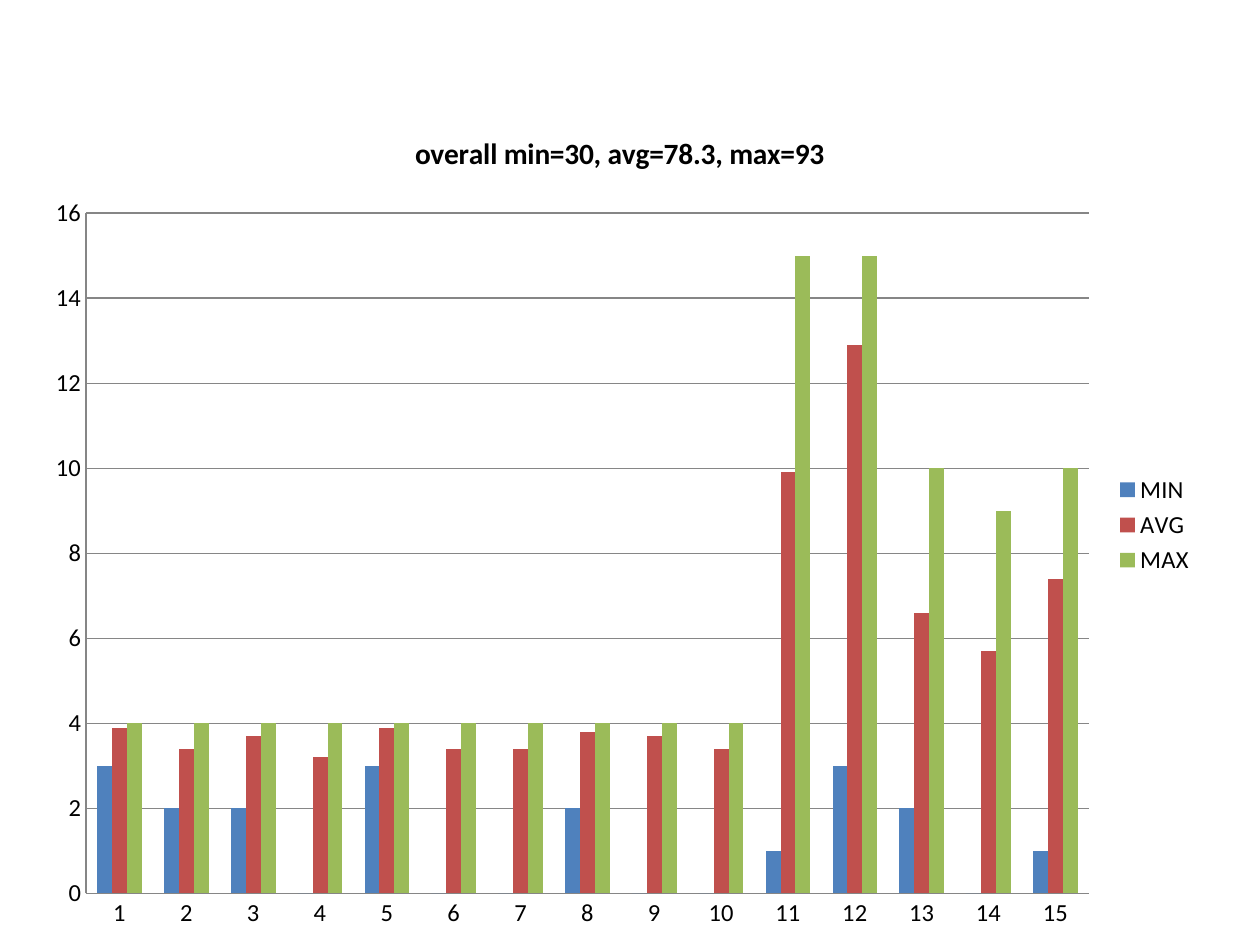
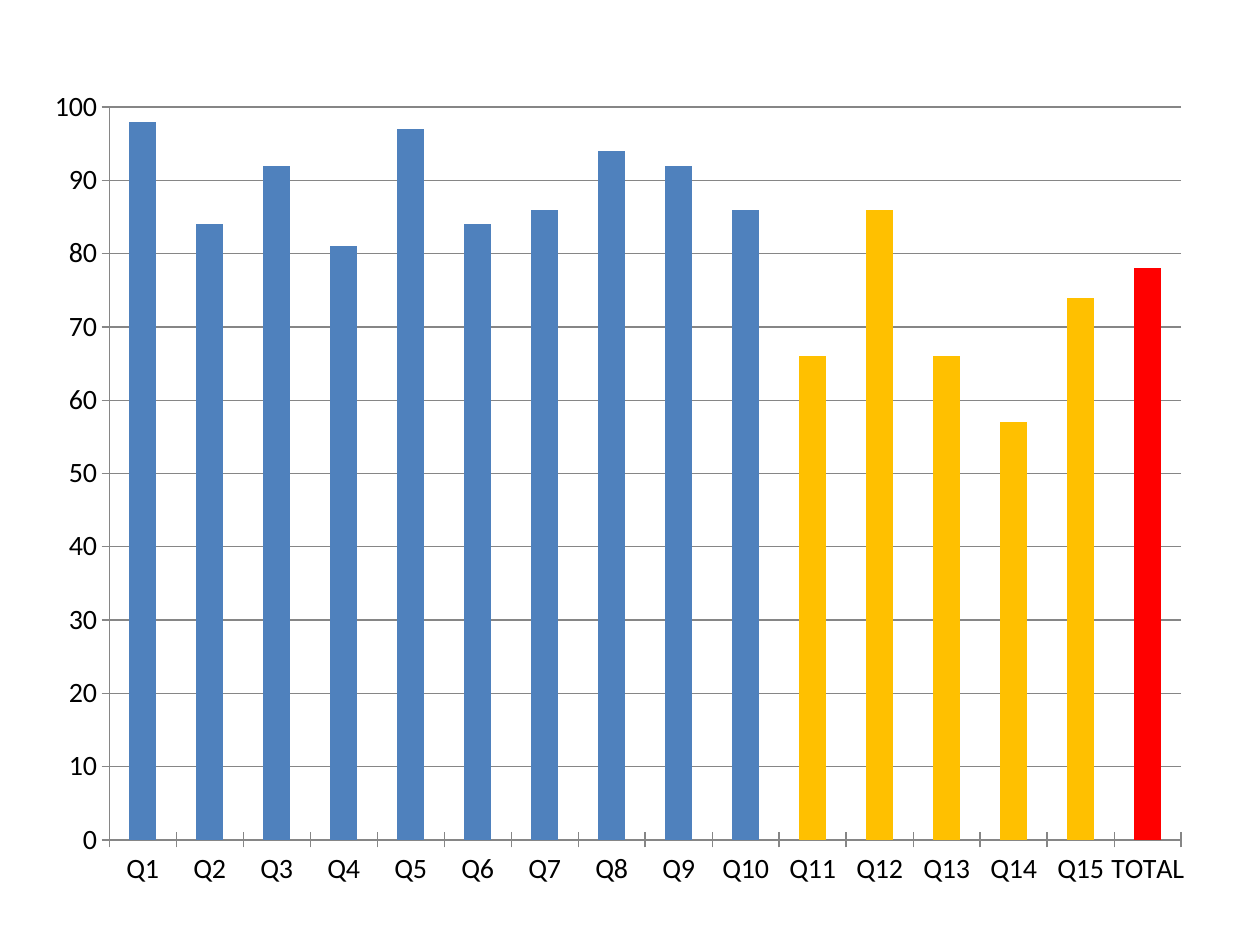
from dataclasses import dataclass
from typing import NamedTuple

from lxml.etree import SubElement
from pptx import Presentation
from pptx.chart.data import CategoryChartData
from pptx.dml.color import RGBColor
from pptx.enum.chart import XL_CHART_TYPE as ChartType
from pptx.enum.chart import XL_LEGEND_POSITION as LegendPosition
from pptx.enum.chart import XL_TICK_MARK as TickMark
from pptx.oxml.ns import qn
from pptx.util import Inches, Pt


@dataclass(frozen=True)
class Theme:
    font: str = "Calibri"
    text: str = "000000"
    line: str = "868686"
    blue: str = "4F81BD"
    red: str = "C0504D"
    green: str = "9BBB59"
    amber: str = "FFC000"
    total: str = "FF0000"
    line_width: float = 0.75
    small: float = 14
    large: float = 16
    heading: float = 16.8
    gap: int = 150


class Area(NamedTuple):
    """A rectangle in columns and rows of the slide grid."""
    column: float
    row: float
    columns: float
    rows: float


THEME = Theme()
GRID_COLUMNS, GRID_ROWS = 120, 90
CELL = Inches(10) // GRID_COLUMNS

# Points scored per question
SCORES = {
    "MIN": [3, 2, 2, 0, 3, 0, 0, 2, 0, 0, 1, 3, 2, 0, 1],
    "AVG": [3.9, 3.4, 3.7, 3.2, 3.9, 3.4, 3.4, 3.8, 3.7, 3.4,
            9.9, 12.9, 6.6, 5.7, 7.4],
    "MAX": [4] * 10 + [15, 15, 10, 9, 10],
}
# Average share of the points, in percent, with the total last
PERCENTAGES = [98, 84, 92, 81, 97, 84, 86, 94, 92, 86, 66, 86, 66, 57, 74, 78]


def paint(fill, colour):
    fill.solid()
    fill.fore_color.rgb = RGBColor.from_string(colour)


def style_font(font, size, bold=False):
    font.name = THEME.font
    font.size = Pt(size)
    font.bold = bold
    font.color.rgb = RGBColor.from_string(THEME.text)


def style_line(line):
    line.width = Pt(THEME.line_width)
    line.color.rgb = RGBColor.from_string(THEME.line)


def style_axes(chart, tick, maximum, step):
    for axis in (chart.category_axis, chart.value_axis):
        axis.major_tick_mark = tick
        axis.minor_tick_mark = TickMark.NONE
        style_line(axis.format.line)
    scale = chart.value_axis
    scale.minimum_scale, scale.maximum_scale = 0, maximum
    scale.major_unit = step
    scale.has_major_gridlines = True
    style_line(scale.major_gridlines.format.line)


def place_plot(chart, frame, plot):
    """Fix the inner plot area, as shares of the chart frame."""
    plot_area = chart.plots[0]._element.getparent()
    layout = plot_area.find(qn("c:layout"))
    if layout is None:
        layout = plot_area.makeelement(qn("c:layout"))
        plot_area.insert(0, layout)
    manual = SubElement(layout, qn("c:manualLayout"))
    settings = {
        "layoutTarget": "inner", "xMode": "edge", "yMode": "edge",
        "x": (plot.column - frame.column) / frame.columns,
        "y": (plot.row - frame.row) / frame.rows,
        "w": plot.columns / frame.columns,
        "h": plot.rows / frame.rows,
    }
    for name, value in settings.items():
        SubElement(manual, qn(f"c:{name}")).set("val", str(value))


def add_columns(page, frame, plot, categories, series, colours, size):
    data = CategoryChartData()
    data.categories = categories
    for name, values in series.items():
        data.add_series(name, values)
    box = [round(length * CELL) for length in frame]
    chart = page.shapes.add_chart(ChartType.COLUMN_CLUSTERED, *box, data).chart
    style_font(chart.font, size)
    chart.has_title = chart.has_legend = False
    columns = chart.plots[0]
    columns.gap_width, columns.overlap = THEME.gap, 0
    columns.vary_by_categories = False
    for row, colour in zip(columns.series, colours):
        paint(row.format.fill, colour)
        row.invert_if_negative = False
    place_plot(chart, frame, plot)
    return chart


def add_heading(chart, text):
    chart.has_title = True
    chart.chart_title.include_in_layout = False
    para = chart.chart_title.text_frame.paragraphs[0]
    para.text = text
    style_font(para.font, THEME.heading, bold=True)


def add_legend(chart, size):
    chart.has_legend = True
    chart.legend.position = LegendPosition.RIGHT
    chart.legend.include_in_layout = False
    style_font(chart.legend.font, size)


def build_scores(page):
    questions = [str(number) for number in range(1, 16)]
    chart = add_columns(page, Area(3, 10, 112, 80), Area(8.2, 20.3, 95.5, 64.8),
                        questions, SCORES,
                        [THEME.blue, THEME.red, THEME.green], THEME.small)
    style_axes(chart, TickMark.NONE, maximum=16, step=2)
    add_heading(chart, "overall min=30, avg=78.3, max=93")
    add_legend(chart, THEME.small)


def build_percentages(page):
    questions = [f"Q{number}" for number in range(1, 16)] + ["TOTAL"]
    chart = add_columns(page, Area(3, 7, 112, 79), Area(10.4, 10.2, 102.1, 69.8),
                        questions, {"Series 1": PERCENTAGES},
                        [THEME.blue], THEME.large)
    style_axes(chart, TickMark.CROSS, maximum=100, step=10)
    # The last five questions and the total stand out
    points = chart.plots[0].series[0].points
    for index, colour in enumerate([THEME.amber] * 5 + [THEME.total], start=10):
        paint(points[index].format.fill, colour)


def main():
    deck = Presentation()
    deck.slide_width = GRID_COLUMNS * CELL
    deck.slide_height = GRID_ROWS * CELL
    blank = deck.slide_layouts[6]
    for build in (build_scores, build_percentages):
        build(deck.slides.add_slide(blank))
    deck.save("out.pptx")


if __name__ == "__main__":
    main()
